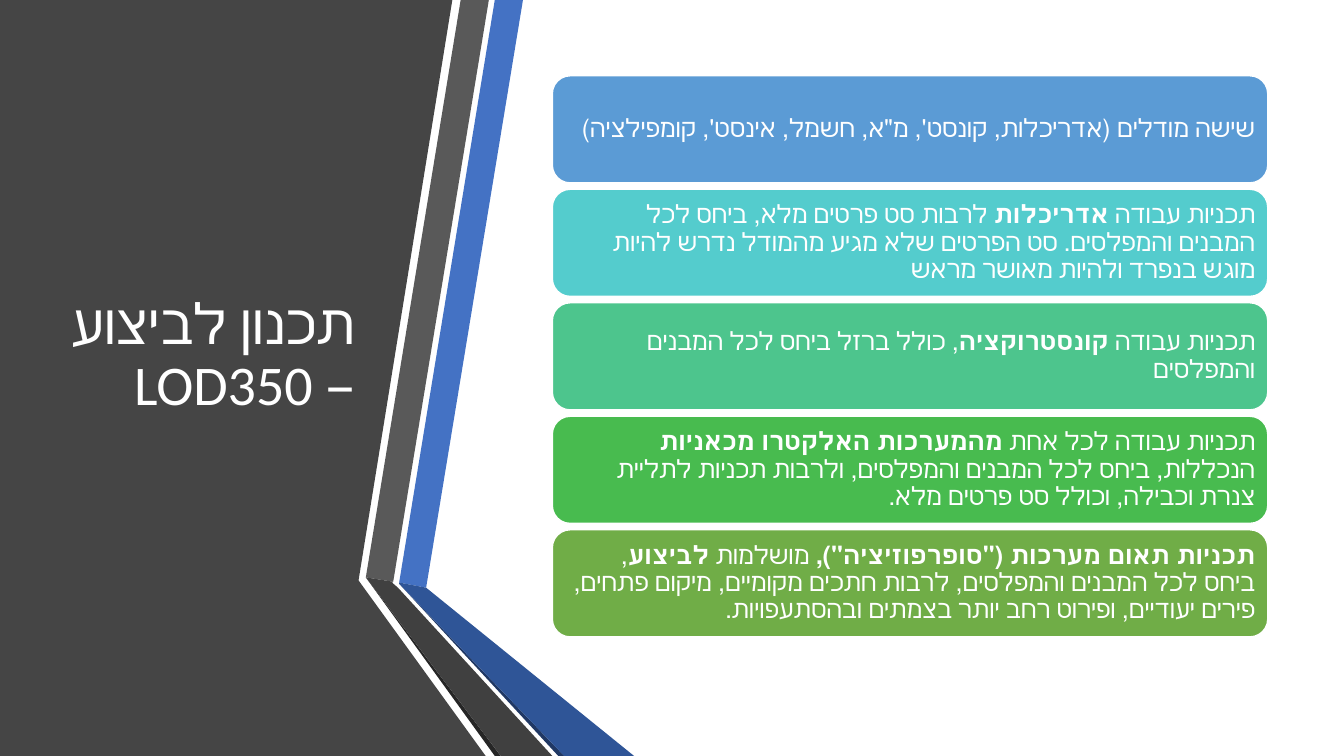
from pptx import Presentation
from pptx.dml.color import RGBColor
from pptx.enum.shapes import MSO_SHAPE
from pptx.enum.text import MSO_ANCHOR, PP_ALIGN
from pptx.util import Cm, Pt

FONT = "Calibri"
COLOURS = {
    "white": "FFFFFF", "panel": "454545",
    "blue": "4472C4", "blue fold": "2F5597", "blue shade": "203864",
    "grey": "595959", "grey fold": "404040", "grey shade": "262626",
    "sky": "5B9BD5", "turquoise": "54CCCD", "mint": "4DC58D",
    "green": "48BB4F", "olive": "70AD47",
}

# Outlines in centimetres from the corner of the region, back to front
OUTLINES = [
    ("panel", [(0, 0), (11.4, 0), (9.04, 14.61), (9.04, 14.63), (12.24, 19.05), (0, 19.05)]),
    ("blue", [(10.06, 14.68), (10.74, 14.81), (13.18, 0), (12.47, 0)]),
    ("grey", [(12.32, 0), (11.61, 0), (9.22, 14.55), (9.91, 14.66)]),
    ("grey shade", [(9.22, 14.55), (12.47, 19.05), (12.62, 19.05)]),
    ("blue shade", [(10.06, 14.71), (14.07, 19.05), (14.22, 19.05)]),
    ("blue fold", [(10.06, 14.71), (14.22, 19.05), (15.98, 19.05), (10.74, 14.81), (10.06, 14.68)]),
    ("grey fold", [(13.92, 19.05), (10.03, 14.81), (9.88, 14.68), (9.91, 14.66),
                   (9.22, 14.55), (12.62, 19.05)]),
]

TITLE = "תכנון לביצוע – LOD350"

# Each bar: colour, then (words, bold) pieces
BARS = [
    ("sky", [("שישה מודלים (אדריכלות, קונסט', מ\"א, חשמל, אינסט', קומפילציה)", False)]),
    ("turquoise", [
        ("תכניות עבודה ", False),
        ("אדריכלות", True),
        (" לרבות סט פרטים מלא, ביחס לכל המבנים והמפלסים. סט הפרטים שלא מגיע"
         " מהמודל נדרש להיות מוגש בנפרד ולהיות מאושר מראש", False)]),
    ("mint", [
        ("תכניות עבודה ", False),
        ("קונסטרוקציה", True),
        (", כולל ברזל ביחס לכל המבנים והמפלסים", False)]),
    ("green", [
        ("תכניות עבודה לכל אחת ", False),
        ("מהמערכות האלקטרו מכאניות ", True),
        ("הנכללות, ביחס לכל המבנים והמפלסים, ולרבות תכניות לתליית צנרת"
         " וכבילה, וכולל סט פרטים מלא.", False)]),
    ("olive", [
        ("תכניות תאום מערכות (\"סופרפוזיציה\"), ", True),
        ("מושלמות ", False),
        ("לביצוע", True),
        (", ביחס לכל המבנים והמפלסים, לרבות חתכים מקומיים, מיקום פתחים,"
         " פירים יעודיים, ופירוט רחב יותר בצמתים ובהסתעפויות.", False)]),
]


def colour(name):
    return RGBColor.from_string(COLOURS[name])


def write(shape, pieces, size, inset):
    """Fill a shape with one right-to-left paragraph of (words, bold) pieces."""
    frame = shape.text_frame
    frame.word_wrap = True
    frame.vertical_anchor = MSO_ANCHOR.MIDDLE
    frame.margin_left = frame.margin_right = Cm(inset)
    frame.margin_top = frame.margin_bottom = Cm(0.13)
    para = frame.paragraphs[0]
    para.alignment = PP_ALIGN.RIGHT
    para.line_spacing = 0.9
    para._p.get_or_add_pPr().set("rtl", "1")
    for words, bold in pieces:
        span = para.add_run()
        span.text = words
        span.font.size = Pt(size)
        span.font.bold = bold
        span.font.name = FONT
        span.font.color.rgb = colour("white")


def add_folded_ribbons(slide, left, top):
    for name, points in OUTLINES:
        corners = [(Cm(left + x), Cm(top + y)) for x, y in points]
        builder = slide.shapes.build_freeform(*corners[0])
        builder.add_line_segments(corners[1:], close=True)
        shape = builder.convert_to_shape()
        shape.shadow.inherit = False
        shape.fill.solid()
        shape.fill.fore_color.rgb = colour(name)
        shape.line.fill.background()


def add_title(slide, left, top, width, height):
    box = slide.shapes.add_textbox(Cm(left), Cm(top), Cm(width), Cm(height))
    write(box, [(TITLE, False)], size=40, inset=0.25)


def add_bars(slide, left, top, width, height, gap=0.16):
    """Stack the bars evenly over the whole height."""
    bar_height = (height - gap * (len(BARS) - 1)) / len(BARS)
    for index, (name, pieces) in enumerate(BARS):
        bar_top = top + index * (bar_height + gap)
        bar = slide.shapes.add_shape(MSO_SHAPE.ROUNDED_RECTANGLE, Cm(left), Cm(bar_top),
                                     Cm(width), Cm(bar_height))
        bar.shadow.inherit = False
        bar.fill.solid()
        bar.fill.fore_color.rgb = colour(name)
        bar.line.color.rgb = colour("white")
        bar.line.width = Pt(1)
        write(bar, pieces, size=18, inset=0.18)


def main():
    deck = Presentation()
    deck.slide_width, deck.slide_height = Cm(33.87), Cm(19.05)
    page = deck.slides.add_slide(deck.slide_layouts[6])
    add_folded_ribbons(page, 0, 0)
    add_title(page, 1.47, 1.91, 7.72, 14.17)
    add_bars(page, 13.92, 1.91, 18.03, 14.14)
    deck.save("out.pptx")


if __name__ == "__main__":
    main()
